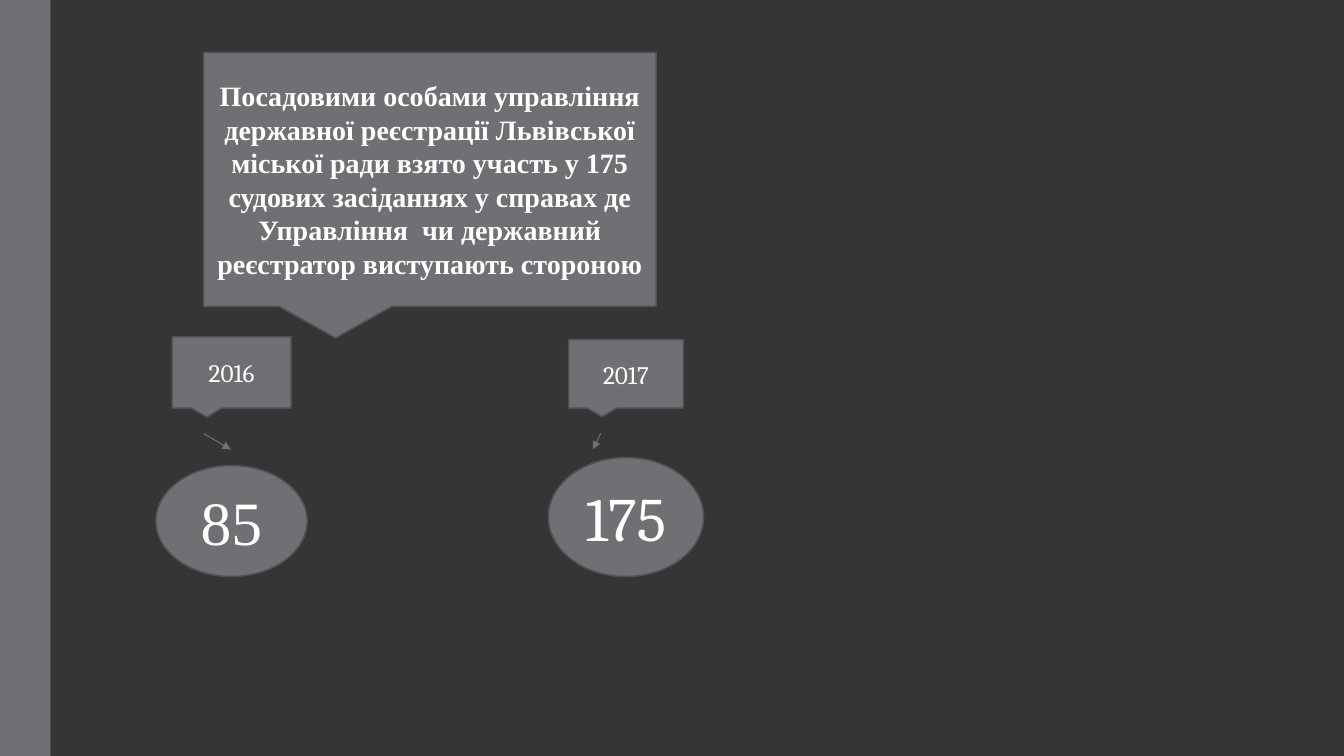
from lxml import etree
from pptx import Presentation
from pptx.dml.color import RGBColor
from pptx.enum.shapes import MSO_CONNECTOR, MSO_SHAPE
from pptx.enum.text import MSO_ANCHOR, PP_ALIGN
from pptx.oxml.ns import qn
from pptx.util import Pt

RECT, OVAL = MSO_SHAPE.RECTANGLE, MSO_SHAPE.OVAL
CALLOUT = MSO_SHAPE.RECTANGULAR_CALLOUT
STRAIGHT = MSO_CONNECTOR.STRAIGHT
CENTER, MIDDLE = PP_ALIGN.CENTER, MSO_ANCHOR.MIDDLE

DARK = RGBColor(0x35, 0x35, 0x37)
GRAY = RGBColor(0x6F, 0x6F, 0x74)
OUTLINE = RGBColor(0x52, 0x52, 0x56)
WHITE = RGBColor(0xFF, 0xFF, 0xFF)
TIMES, CAMBRIA = "Times New Roman", "Cambria"

STATEMENT = (
    "Посадовими особами управління державної реєстрації Львівської "
    "міської ради взято участь у 175 судових засіданнях у справах де "
    "Управління  чи державний реєстратор виступають стороною"
)


def add_gray_shape(s, kind, left, top, width, height):
    sp = s.shapes.add_shape(kind, Pt(left), Pt(top), Pt(width), Pt(height))
    sp.shadow.inherit = False
    sp.fill.solid()
    sp.fill.fore_color.rgb = GRAY
    sp.line.fill.background()
    return sp


def add_label(s, kind, box, text, size, font, bold=False):
    sp = add_gray_shape(s, kind, *box)
    sp.line.color.rgb = OUTLINE
    sp.line.width = Pt(1.1)
    tf = sp.text_frame
    tf.word_wrap = True
    tf.vertical_anchor = MIDDLE
    p = tf.paragraphs[0]
    p.text = text
    p.alignment = CENTER
    p.font.size = Pt(size)
    p.font.name = font
    p.font.bold = bold
    p.font.color.rgb = WHITE


def add_arrow(s, x1, y1, x2, y2):
    line = s.shapes.add_connector(STRAIGHT, Pt(x1), Pt(y1), Pt(x2), Pt(y2))
    line.line.color.rgb = GRAY
    line.line.width = Pt(0.75)
    etree.SubElement(line.line._get_or_add_ln(), qn("a:tailEnd"), type="triangle")
    etree.SubElement(line._element.spPr, qn("a:effectLst"))


def add_year(s, box, year, count, count_font, callout_size, oval_height, arrow_dx):
    """Year callout over its count; arrow_dx holds the arrow ends relative to the centre."""
    left, top, width, height = box
    center = left + width / 2
    callout_width, callout_height = callout_size
    add_label(s, OVAL, (left, top + height - oval_height, width, oval_height),
              count, 44, count_font)
    add_label(s, CALLOUT,
              (center - callout_width / 2, top, callout_width, callout_height),
              year, 18, CAMBRIA)
    arrow_top = top + callout_height + 18
    start, end = arrow_dx
    add_arrow(s, center + start, arrow_top, center + end, arrow_top + 11.5)


def main():
    prs = Presentation()
    prs.slide_width, prs.slide_height = Pt(960), Pt(540)
    s = prs.slides.add_slide(prs.slide_layouts[6])
    s.background.fill.solid()
    s.background.fill.fore_color.rgb = DARK

    add_gray_shape(s, RECT, 0, 0, 36, 540)
    add_label(s, CALLOUT, (145.4, 37.4, 323.3, 181.4), STATEMENT, 20, TIMES, bold=True)
    add_year(s, (111.4, 240.6, 108, 171.2), "2016", "85", TIMES,
             (85, 51), 79.2, (-20, -0.5))
    add_year(s, (391.7, 242.6, 110.9, 169.2), "2017", "175", CAMBRIA,
             (82, 49), 85, (-18, -23.7))
    prs.save("out.pptx")


if __name__ == "__main__":
    main()
